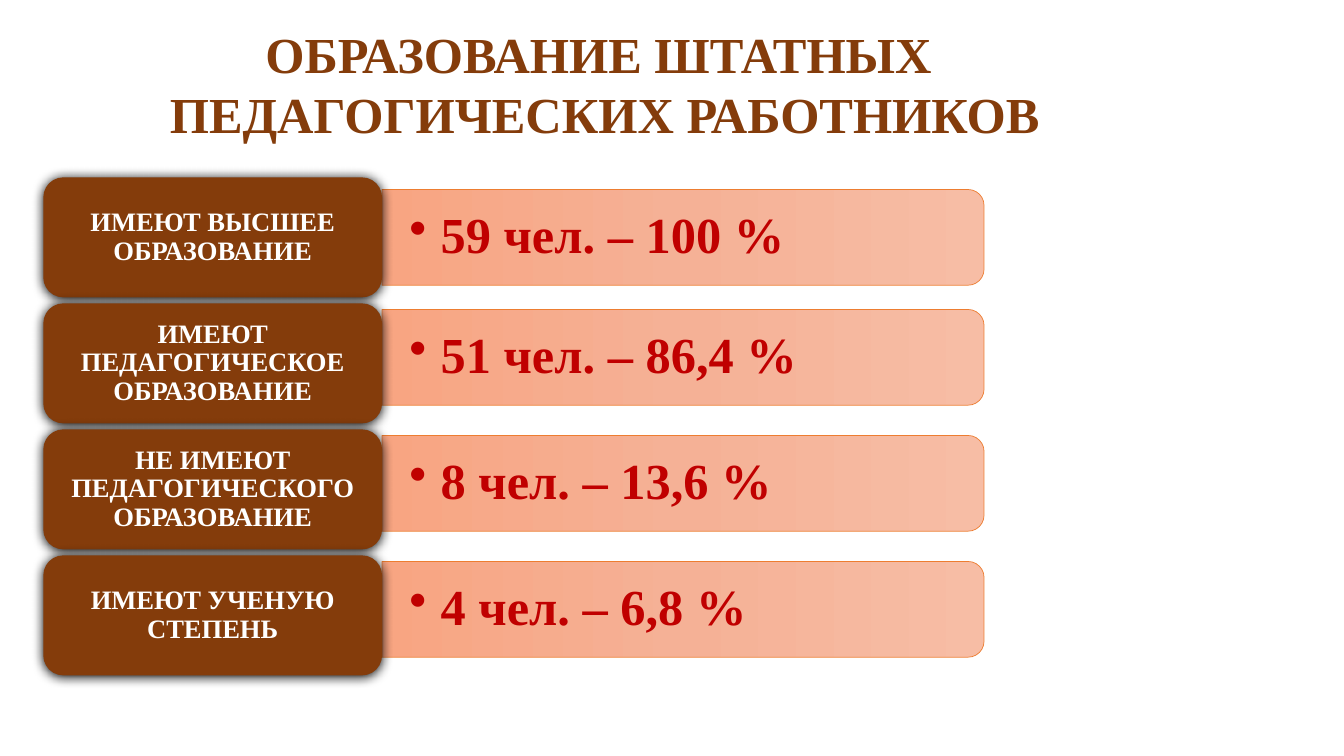
"""Build the slide on the education of the teaching staff."""
from pptx import Presentation
from pptx.dml.color import RGBColor
from pptx.enum.shapes import MSO_SHAPE
from pptx.enum.text import MSO_ANCHOR, MSO_AUTO_SIZE, PP_ALIGN
from pptx.oxml import parse_xml
from pptx.oxml.ns import nsdecls
from pptx.util import Inches, Pt

BROWN = RGBColor(0x84, 0x3C, 0x0B)
RED = RGBColor(0xC0, 0x00, 0x00)
WHITE = RGBColor(0xFF, 0xFF, 0xFF)
ORANGE = RGBColor(0xED, 0x7D, 0x31)
STOPS = [
    (0, RGBColor(0xF7, 0xBD, 0xA5)),
    (50, RGBColor(0xF5, 0xB1, 0x96)),
    (100, RGBColor(0xF8, 0xA5, 0x82)),
]
ROUND = MSO_SHAPE.ROUNDED_RECTANGLE
TAB = MSO_SHAPE.ROUND_2_SAME_RECTANGLE
MIDDLE = MSO_ANCHOR.MIDDLE
FIXED = MSO_AUTO_SIZE.NONE
CENTER = PP_ALIGN.CENTER
LEFT = PP_ALIGN.LEFT

ROWS = [
    ("ИМЕЮТ ВЫСШЕЕ ОБРАЗОВАНИЕ", "59 чел. – 100 %", 0),
    ("ИМЕЮТ ПЕДАГОГИЧЕСКОЕ ОБРАЗОВАНИЕ", "51 чел. – 86,4 %", 0.06),
    ("НЕ ИМЕЮТ ПЕДАГОГИЧЕСКОГО ОБРАЗОВАНИЕ", "8 чел. – 13,6 %", 0.06),
    ("ИМЕЮТ УЧЕНУЮ СТЕПЕНЬ", "4 чел. – 6,8 %", 0.06),
]
FIRST, PITCH = 2.355, 1.25
LABEL_X, LABEL_W, LABEL_H = 0.43, 3.36, 1.19
BAR_X, BAR_W, BAR_H = LABEL_X + LABEL_W, 5.97, 0.95
TEXT_W, TEXT_H = 5.93, 0.86


def write(shape, text, size, color, align, pad, space=0.9):
    frame = shape.text_frame
    frame.text = text
    side, edge = map(Inches, pad)
    form = {"word_wrap": True, "auto_size": FIXED, "vertical_anchor": MIDDLE,
            "margin_left": side, "margin_right": side,
            "margin_top": edge, "margin_bottom": edge}
    para = frame.paragraphs[0]
    look = {"name": "Times New Roman", "size": Pt(size), "bold": True}
    for item, values in ((frame, form), (para.runs[0].font, look),
                         (para, {"alignment": align, "line_spacing": space})):
        for key, value in values.items():
            setattr(item, key, value)
    for run in para.runs:
        for key, value in look.items():
            setattr(run.font, key, value)
        run.font.color.rgb = color
    return para


deck = Presentation()
deck.slide_width, deck.slide_height = Inches(13.33), Inches(7.5)
slide = deck.slides.add_slide(deck.slide_layouts[5])
shapes = slide.shapes

title = shapes.title
place = {"left": 0, "top": 0.17, "width": 12, "height": 1.31}
for key, value in place.items():
    setattr(title, key, Inches(value))
write(title, "ОБРАЗОВАНИЕ ШТАТНЫХ \vПЕДАГОГИЧЕСКИХ РАБОТНИКОВ",
      36, BROWN, CENTER, (0.1, 0.05), 1.0)

stops = "".join(
    f'<a:gs pos="{pos * 1000}"><a:srgbClr val="{color}"/></a:gs>'
    for pos, color in STOPS)

for row, (name, count, lift) in enumerate(ROWS):
    mid = FIRST + row * PITCH
    level = mid - lift

    bar = shapes.add_shape(
        TAB, Inches(BAR_X + (BAR_W - BAR_H) / 2), Inches(level - BAR_W / 2),
        Inches(BAR_H), Inches(BAR_W))
    bar.rotation = 90
    bar.shadow.inherit = False
    bar.fill.gradient()
    bar.fill.gradient_angle = 270
    old = bar.fill._xPr.find(".//{*}gsLst")
    old.getparent().replace(
        old, parse_xml(f'<a:gsLst {nsdecls("a")}>{stops}</a:gsLst>'))
    bar.line.color.rgb = ORANGE
    bar.line.width = Pt(0.5)

    box = shapes.add_textbox(Inches(BAR_X), Inches(level - TEXT_H / 2),
                             Inches(TEXT_W), Inches(TEXT_H))
    para = write(box, count, 36, RED, LEFT, (0.27, 0.14))
    props = para._p.get_or_add_pPr()
    props.set("marL", str(Inches(0.31)))
    props.set("indent", str(-Inches(0.31)))
    props.append(parse_xml(f'<a:buChar {nsdecls("a")} char="•"/>'))

    label = shapes.add_shape(
        ROUND, Inches(LABEL_X), Inches(mid - LABEL_H / 2),
        Inches(LABEL_W), Inches(LABEL_H))
    label.fill.solid()
    label.fill.fore_color.rgb = BROWN
    label.line.fill.background()
    label.shadow.inherit = False
    label._element.spPr.find("{*}effectLst").append(parse_xml(
        f'<a:outerShdw {nsdecls("a")} blurRad="{Pt(8.5)}" dist="{Pt(1)}" '
        'dir="5400000" algn="ctr" rotWithShape="0">'
        '<a:srgbClr val="000000"/></a:outerShdw>'))
    write(label, name, 19, WHITE, CENTER, (0.14, 0.1))

deck.save("out.pptx")
